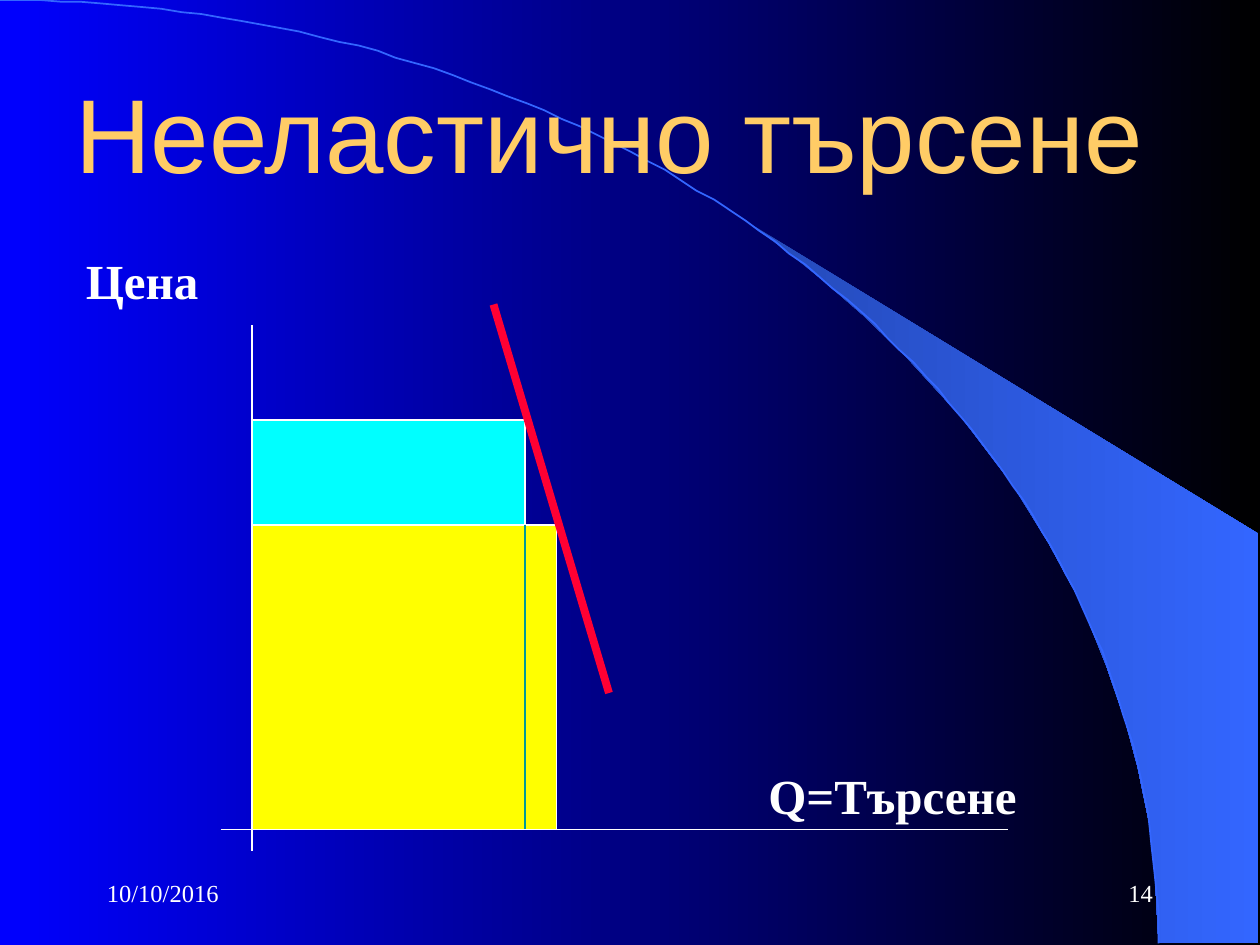
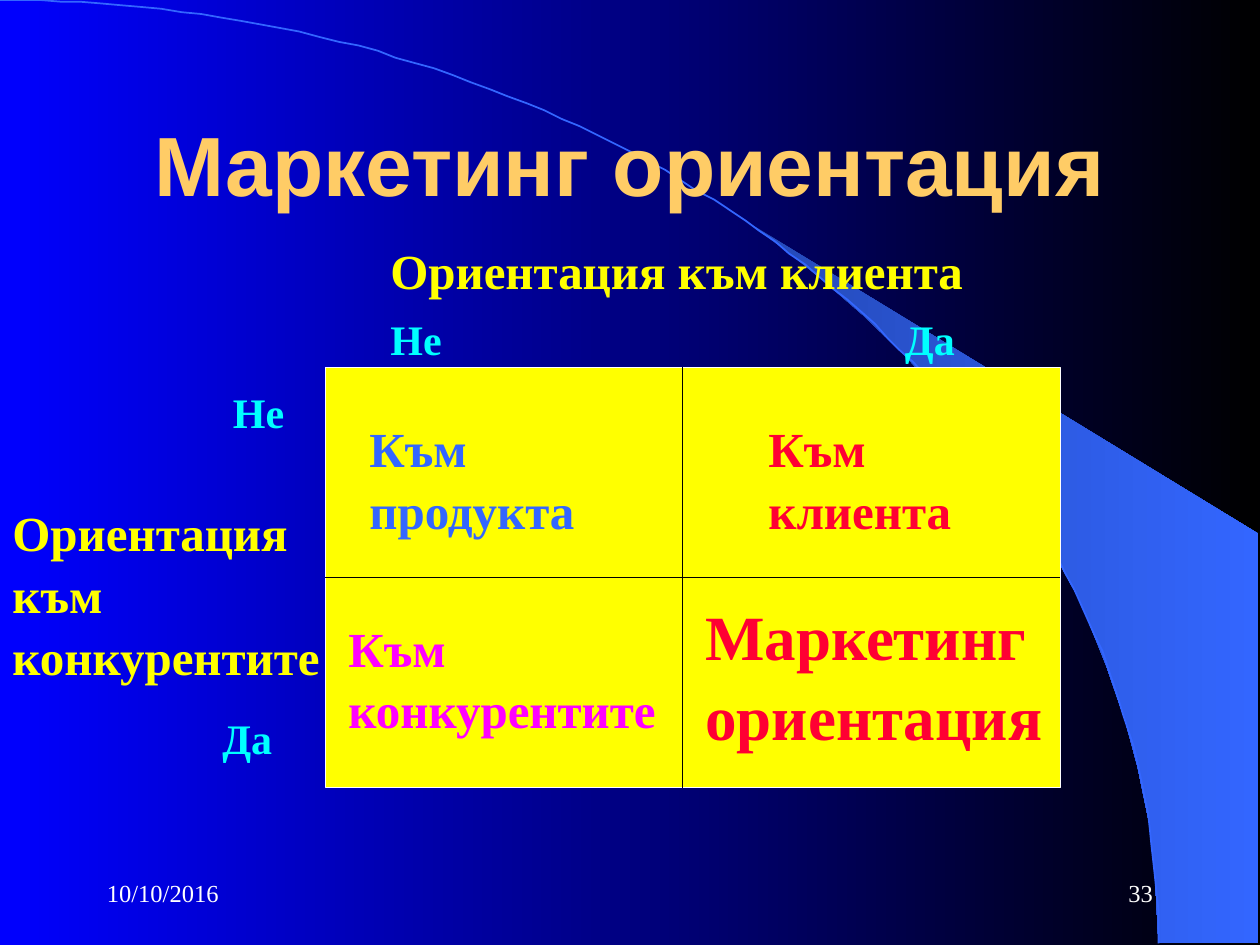
from math import cos, pi, sin

from lxml import etree
from pptx import Presentation
from pptx.dml.color import RGBColor
from pptx.enum.shapes import MSO_CONNECTOR, MSO_SHAPE
from pptx.enum.text import MSO_ANCHOR, MSO_AUTO_SIZE, PP_ALIGN
from pptx.oxml.ns import qn
from pptx.util import Pt

STRAIGHT = MSO_CONNECTOR.STRAIGHT
RECTANGLE = MSO_SHAPE.RECTANGLE
TOP, MIDDLE = MSO_ANCHOR.TOP, MSO_ANCHOR.MIDDLE
LEFT, CENTER, RIGHT = PP_ALIGN.LEFT, PP_ALIGN.CENTER, PP_ALIGN.RIGHT
NO_FIT = MSO_AUTO_SIZE.NONE

COLORS = {
    "blue": "0000FF", "black": "000000", "white": "FFFFFF",
    "wedge": "2449B6", "arc": "3366FF", "title": "FFCC66",
    "cyan": "00FFFF", "yellow": "FFFF00", "red": "FF0033",
    "teal": "009999", "magenta": "FF00FF",
}
TITLE_FONT, BODY_FONT = "Arial", "Times New Roman"
PAGE_WIDTH, PAGE_HEIGHT = 720, 540
HAIRLINE = 0.75
LABEL_SPACING = 1.05
ARC_WIDTH, ARC_HEIGHT, ARC_STEPS = 662, 539, 90
WEDGE = [
    (662, 539), (719, 539), (719, 305), (424, 125), (449, 143), (470, 160),
    (493, 180), (516, 202), (549, 238), (578, 276), (599, 310), (618, 345),
    (632, 380), (643, 412), (650, 438), (657, 472), (660, 501),
]


def color(name):
    """Return the named colour."""
    return RGBColor.from_string(COLORS[name])


def fill_gradient(fill, *names):
    """Fill from left to right with two named colours."""
    fill.gradient()
    fill.gradient_angle = 0
    for position, (stop, name) in enumerate(zip(fill.gradient_stops, names)):
        stop.color.rgb = color(name)
        stop.position = position


def write(frame, text, size, tint, font=BODY_FONT, bold=False,
          align=LEFT, anchor=TOP, spacing=1.0):
    """Write one formatted paragraph into a text frame."""
    frame.word_wrap = True
    frame.auto_size = NO_FIT
    frame.vertical_anchor = anchor
    para = frame.paragraphs[0]
    para.alignment = align
    para.line_spacing = spacing
    para.space_before = Pt(0)
    span = para.add_run()
    span.text = text
    span.font.name = font
    span.font.size = Pt(size)
    span.font.bold = bold
    span.font.color.rgb = color(tint)


def add_text(page, box, text, size, tint, **style):
    """Add a text box at left, top, width, height."""
    shape = page.shapes.add_textbox(*map(Pt, box))
    write(shape.text_frame, text, size, tint, **style)


def add_label(page, box, text, tint, size=28):
    """Add a bold diagram label."""
    add_text(page, box, text, size, tint, bold=True, spacing=LABEL_SPACING)


def add_line(page, start, end, tint, width=HAIRLINE):
    """Draw a straight line without a shadow."""
    line = page.shapes.add_connector(STRAIGHT, *map(Pt, start + end))
    line.line.color.rgb = color(tint)
    line.line.width = Pt(width)
    etree.SubElement(line.element.spPr, qn("a:effectLst"))


def add_block(page, box, tint):
    """Draw a filled rectangle with a thin white outline."""
    block = page.shapes.add_shape(RECTANGLE, *map(Pt, box))
    block.shadow.inherit = False
    block.fill.solid()
    block.fill.fore_color.rgb = color(tint)
    block.line.color.rgb = color("white")
    block.line.width = Pt(HAIRLINE)


def add_outline(page, points, close):
    """Build a freeform through points given in page points."""
    builder = page.shapes.build_freeform(*points[0], scale=Pt(1))
    builder.add_line_segments(points[1:], close=close)
    shape = builder.convert_to_shape()
    shape.shadow.inherit = False
    return shape


def decorate_master(deck, page):
    """Draw the wedge and arc and place them behind everything on the master."""
    master = deck.slide_master
    fill_gradient(master.background.fill, "blue", "black")
    wedge = add_outline(page, WEDGE, True)
    fill_gradient(wedge.fill, "wedge", "arc")
    wedge.line.fill.background()
    angles = [pi / 2 * step / ARC_STEPS for step in range(ARC_STEPS + 1)]
    arc = add_outline(page, [(ARC_WIDTH * sin(angle), ARC_HEIGHT * (1 - cos(angle)))
                             for angle in angles], False)
    arc.fill.background()
    arc.line.color.rgb = color("arc")
    arc.line.width = Pt(1)
    for order, shape in enumerate((wedge, arc)):
        shape.element.nvSpPr.cNvPr.set("id", str(100 + order))
        master.shapes.element.insert(2 + order, shape.element)


def add_page(deck, title, box, size, number, bold=False):
    """Add a slide with its title, date and number."""
    page = deck.slides.add_slide(deck.slide_layouts[5])
    heading = page.shapes.title
    heading.left, heading.top, heading.width, heading.height = map(Pt, box)
    write(heading.text_frame, title, size, "title", TITLE_FONT, bold, CENTER, MIDDLE)
    for left, text, align in ((54, "10/10/2016", LEFT), (516, number, RIGHT)):
        add_text(page, (left, 492, 150, 36), text, 14, "white",
                 align=align, anchor=MIDDLE)
    return page


def draw_demand(page, left, base):
    """Draw the demand diagram from its axis origin."""
    old_price, new_price = 174, 234
    old_quantity, new_quantity = 174, 156
    add_line(page, (left, base - 288), (left, base + 12), "white")
    add_line(page, (left - 18, base), (left + 432, base), "white")
    for quantity, price, tint in ((new_quantity, new_price, "cyan"),
                                  (old_quantity, old_price, "yellow")):
        add_block(page, (left, base - price, quantity, price), tint)
    add_line(page, (left + 138, base - 300), (left + 204, base - 78), "red", 4.5)
    add_line(page, (left + new_quantity, base - old_price),
             (left + new_quantity, base), "teal")
    add_label(page, (left - 102, base - 336, 108, 41), "Цена", "white")
    add_label(page, (left + 288, base - 42, 252, 41), "Q=Търсене", "white")


def draw_matrix(page, left, top, width, height):
    """Draw the two-by-two orientation matrix with its headings."""
    split = left + 204
    middle = top + height / 2
    add_block(page, (left, top, width, height), "yellow")
    labels = [
        (18, 24, 162, 74, "Към продукта", "arc", 28),
        (246, 24, 150, 74, "Към клиента", "red", 28),
        (6, 138, 192, 74, "Към конкурентите", "magenta", 28),
        (210, 126, 210, 94, "Маркетинг ориентация", "red", 36),
        (30, -78, 360, 41, "Ориентация към клиента", "yellow", 28),
        (-186, 72, 192, 108, "Ориентация към конкурентите", "yellow", 28),
        (30, -36, 48, 36, "Не", "cyan", 24),
        (324, -36, 54, 36, "Да", "cyan", 24),
        (-60, 6, 54, 36, "Не", "cyan", 24),
        (-66, 192, 54, 36, "Да", "cyan", 24),
    ]
    for x, y, label_width, label_height, text, tint, size in labels:
        add_label(page, (left + x, top + y, label_width, label_height), text, tint, size)
    add_line(page, (split, top), (split, top + height), "black")
    add_line(page, (left, middle), (left + width, middle), "black")


def main():
    """Build and save the deck."""
    deck = Presentation()
    deck.slide_width, deck.slide_height = Pt(PAGE_WIDTH), Pt(PAGE_HEIGHT)
    demand = add_page(deck, "Нееластично търсене", (30, 30, 636, 90), 60, "14")
    decorate_master(deck, demand)
    draw_demand(demand, 144, 474)
    matrix = add_page(deck, "Маркетинг ориентация", (54, 48, 612, 90), 48, "33", True)
    draw_matrix(matrix, 186, 210, 420, 240)
    deck.save("out.pptx")


if __name__ == "__main__":
    main()
